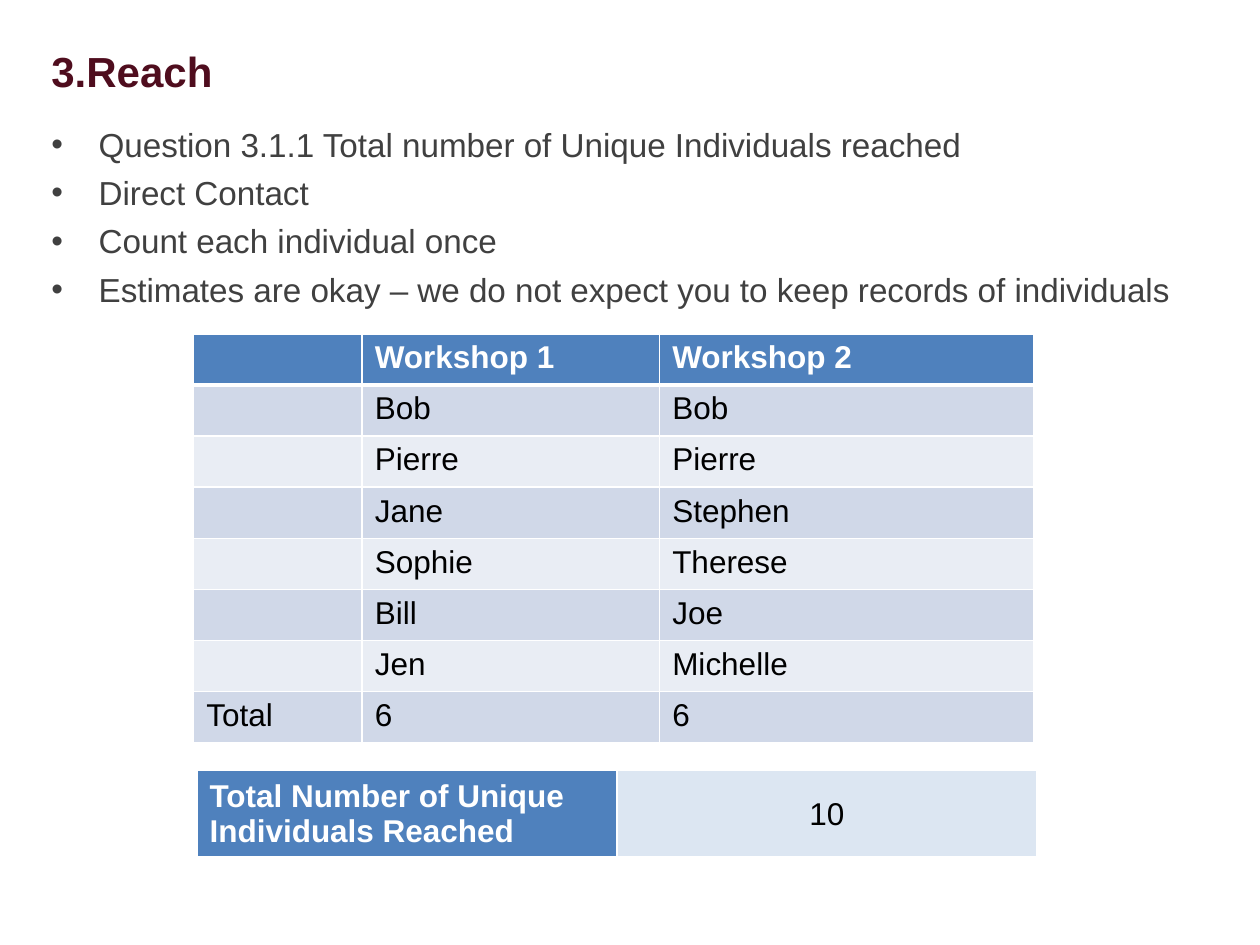
from lxml.etree import SubElement
from pptx import Presentation
from pptx.dml.color import RGBColor
from pptx.enum.text import MSO_ANCHOR, PP_ALIGN
from pptx.oxml.ns import qn
from pptx.util import Pt

HUES = {
    "title": "4F0D1E",
    "body": "404040",
    "head": "4F81BD",
    "odd": "D0D8E8",
    "even": "E9EDF4",
    "sum": "DCE6F2",
    "white": "FFFFFF",
    "black": "000000",
}
POINTS = [
    "Question 3.1.1 Total number of Unique Individuals reached",
    "Direct Contact",
    "Count each individual once",
    "Estimates are okay – we do not expect you to keep records of individuals",
]
ROWS = [
    ("", "Workshop 1", "Workshop 2"),
    ("", "Bob", "Bob"),
    ("", "Pierre", "Pierre"),
    ("", "Jane", "Stephen"),
    ("", "Sophie", "Therese"),
    ("", "Bill", "Joe"),
    ("", "Jen", "Michelle"),
    ("Total", "6", "6"),
]


def style(para, size, hue, bold=False):
    font = para.font
    if para.runs:
        font = para.runs[0].font
    font.name = "Arial"
    font.size = Pt(size)
    font.bold = bold
    font.color.rgb = RGBColor.from_string(HUES[hue])


def add_box(slide, box):
    frame = slide.shapes.add_textbox(*map(Pt, box)).text_frame
    frame.word_wrap = True
    return frame


def add_title(slide, box, text):
    frame = add_box(slide, box)
    frame.vertical_anchor = MSO_ANCHOR.BOTTOM
    frame.text = text
    style(frame.paragraphs[0], 24, "title", True)


def add_points(slide, box, points):
    frame = add_box(slide, box)
    frame.text = "\n".join(points)
    for i, para in enumerate(frame.paragraphs):
        if i:
            para.space_before = Pt(4.75)
        props = para._p.get_or_add_pPr()
        props.set("marL", str(Pt(27)))
        props.set("indent", str(Pt(-27)))
        SubElement(props, qn("a:buFont")).set("typeface", "Arial")
        SubElement(props, qn("a:buChar")).set("char", "•")
        style(para, 19, "body")


def add_edges(cell, base):
    props = cell._tc.get_or_add_tcPr()
    for i, side in enumerate("LRTB"):
        line = SubElement(props, qn("a:ln" + side))
        line.set("w", str(Pt(base if side == "B" else 1)))
        fill = SubElement(line, qn("a:solidFill"))
        SubElement(fill, qn("a:srgbClr")).set("val", HUES["white"])


def fill_cell(cell, text, hue, head=False, base=1):
    add_edges(cell, base)
    cell.fill.solid()
    cell.fill.fore_color.rgb = RGBColor.from_string(HUES[hue])
    cell.text = text
    style(cell.text_frame.paragraphs[0], 18, "white" if head else "black", head)


def add_grid(slide, box, count, widths):
    grid = slide.shapes.add_table(count, len(widths), *map(Pt, box)).table
    for col, width in zip(grid.columns, widths):
        col.width = Pt(width)
    for row in grid.rows:
        row.height = Pt(box[3] / count)
    return grid


def add_names(slide, box):
    grid = add_grid(slide, box, len(ROWS), (96.3, 170, 213.7))
    for r, row in enumerate(ROWS):
        hue = ("even", "odd")[r % 2] if r else "head"
        for c, text in enumerate(row):
            fill_cell(grid.cell(r, c), text, hue, r == 0, 1 if r else 3)


def add_total(slide, box):
    grid = add_grid(slide, box, 1, (box[2] / 2, box[2] / 2))
    label, value = grid.cell(0, 0), grid.cell(0, 1)
    fill_cell(label, "Total Number of Unique Individuals Reached", "head", True, 3)
    fill_cell(value, "10", "sum", base=3)
    value.text_frame.paragraphs[0].alignment = PP_ALIGN.CENTER
    for cell in (label, value):
        cell.vertical_anchor = MSO_ANCHOR.MIDDLE


def main():
    deck = Presentation()
    deck.slide_width, deck.slide_height = Pt(720), Pt(540)
    slide = deck.slides.add_slide(deck.slide_layouts[6])
    add_title(slide, (22.3, -2, 676, 60.5), "3.Reach")
    add_points(slide, (22.3, 67.5, 676, 384), POINTS)
    add_names(slide, (110.7, 190.8, 480, 233.6))
    add_total(slide, (112.6, 440, 480, 48.6))
    deck.save("out.pptx")


if __name__ == "__main__":
    main()
